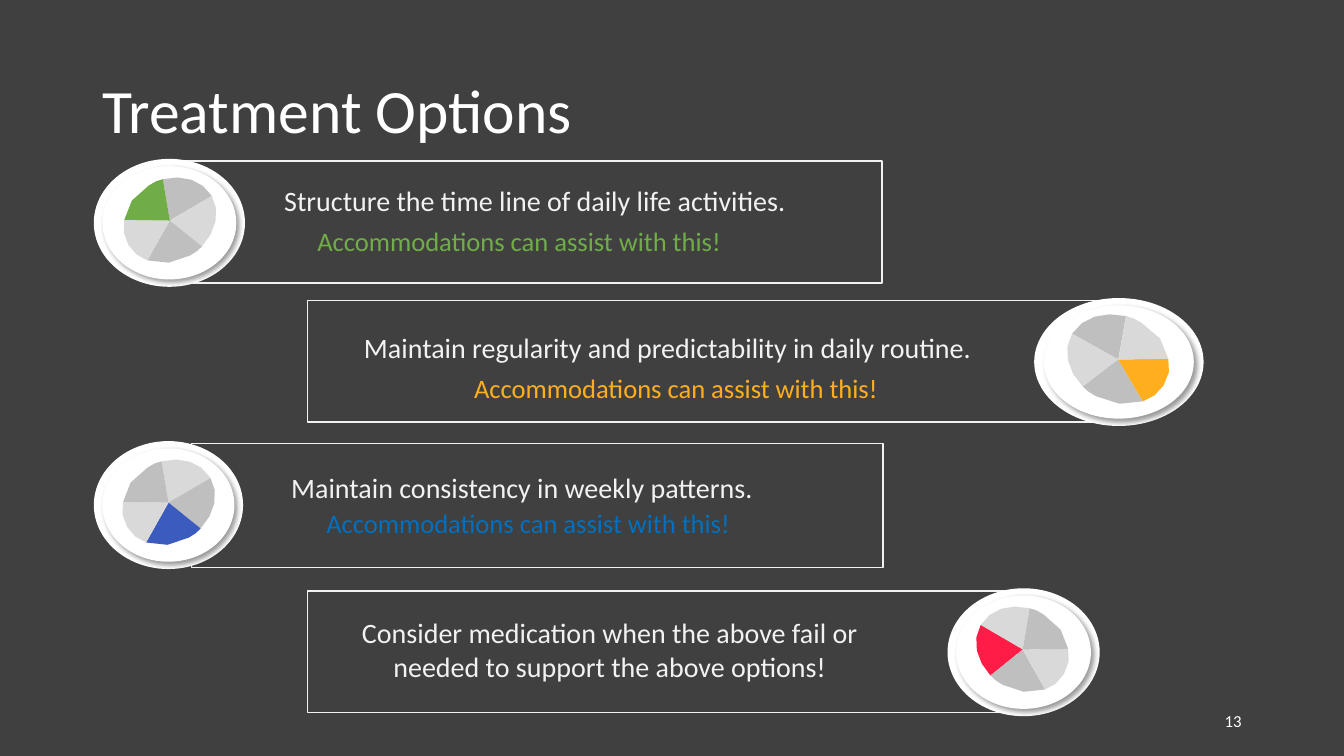
from pptx import Presentation
from pptx.dml.color import RGBColor
from pptx.enum import shapes, text
from pptx.oxml import parse_xml
from pptx.oxml.ns import nsdecls
from pptx.util import Pt

BACK = RGBColor(0x40, 0x40, 0x40)
WHITE = RGBColor(0xFF, 0xFF, 0xFF)
PALE = RGBColor(0xF2, 0xF2, 0xF2)
LIGHT = RGBColor(0xD9, 0xD9, 0xD9)
MID = RGBColor(0xBF, 0xBF, 0xBF)
GREEN = RGBColor(0x70, 0xAD, 0x47)
ORANGE = RGBColor(0xFF, 0xAE, 0x1D)
INDIGO = RGBColor(0x3C, 0x5B, 0xBE)
BLUE = RGBColor(0x00, 0x70, 0xC0)
RED = RGBColor(0xFF, 0x1D, 0x48)

FONT = "Calibri"
LEFT, CENTER, RIGHT = text.PP_ALIGN.LEFT, text.PP_ALIGN.CENTER, text.PP_ALIGN.RIGHT
NOTE = "Accommodations can assist with this!"
DISC_H = 91.4

# Bezier points of the pie rim, clockwise around its hub; each wedge starts where the last ends
RIM = [
    [(9.5, -33), (23, -29), (30, -17.5)],
    [(36.5, -6.5), (33, 8), (23, 18.5)],
    [(21, 21), (18, 23), (14.5, 25), (5, 31), (-6.5, 31.5), (-16, 28.5)],
    [(-21.5, 26.5), (-26.5, 23), (-29.5, 17.5), (-33, 11.5), (-34, 5.5), (-32.5, -0.5)],
    [(-31.5, -10), (-25, -19.5), (-15, -25), (-11.5, -27.5), (-8, -29), (-5, -29.5)],
]

# box, disc (left, width), hub, pie scale (negative x mirrors it), wedge colours,
# texts: (offset and size in the box, alignment, words, size, colour)
PANELS = [
    ((121, 115.2, 509, 87.1), (67, 108), (121.3, 157.5), (1, 1),
     (MID, LIGHT, MID, LIGHT, GREEN),
     [((98.6, 41.8, 343.4, 28.8), LEFT, NOTE, 19, GREEN),
      ((74.9, 12.2, 409, 41), LEFT,
       "Structure the time line of daily life activities.", 20, PALE)]),
    ((219.6, 214.6, 576, 87.1), (738.7, 121), (798.8, 256.8), (-1.1, 1.05),
     (MID, LIGHT, MID, ORANGE, LIGHT),
     [((70.6, 47.5, 385.2, 28.8), CENTER, NOTE, 19, ORANGE),
      ((2.9, 18, 509, 28.8), CENTER,
       "Maintain regularity and predictability in daily routine.", 20, PALE)]),
    ((136.8, 316.8, 493.9, 88.6), (67, 106.6), (120.4, 359), (1, 1),
     (LIGHT, MID, INDIGO, LIGHT, MID),
     [((71.3, 41.8, 338.4, 28.8), CENTER, NOTE, 19, BLUE),
      ((64.1, 15.8, 403.2, 41), LEFT,
       "Maintain consistency in weekly patterns.", 20, PALE)]),
    ((219.6, 421.9, 517, 87.1), (676.8, 108.7), (730.5, 464), (-1, 1),
     (LIGHT, RED, MID, LIGHT, MID),
     [((10.8, 14.4, 410.4, 59.8), CENTER,
       "Consider medication when the above fail or needed to support the above options!",
       20, PALE)]),
]


def add_run(p, words, size, color):
    r = p.add_run()
    r.text = words
    r.font.name, r.font.size, r.font.color.rgb = FONT, Pt(size), color


def add_text(parent, box, align, words, size, color):
    sp = parent.shapes.add_textbox(*map(Pt, box))
    tf = sp.text_frame
    tf.word_wrap = True
    p = tf.paragraphs[0]
    p.alignment = align
    add_run(p, words, size, color)
    return tf


def add_solid(sp, color):
    sp.shadow.inherit = False
    sp.fill.solid()
    sp.fill.fore_color.rgb = color
    sp.line.fill.background()


def add_disc(g, left, top, width):
    """White ring with a smaller, shadowed disc centred in it."""
    for scale in (1, 0.885):
        w, h = width * scale, DISC_H * scale
        sp = g.shapes.add_shape(shapes.MSO_SHAPE.OVAL, Pt(left + (width - w) / 2),
                                Pt(top + (DISC_H - h) / 2), Pt(w), Pt(h))
        add_solid(sp, WHITE)
    sp._element.spPr.find("{*}effectLst").append(parse_xml(
        f'<a:outerShdw {nsdecls("a")} blurRad="{Pt(4)}" dist="{Pt(3)}" dir="2700000"'
        ' algn="tl" rotWithShape="0"><a:srgbClr val="000000">'
        '<a:alpha val="40000"/></a:srgbClr></a:outerShdw>'))


def curve(points):
    """Points along a chain of cubic Bezier curves, four steps for the whole chain."""
    out = [points[0]]
    curves = len(points) // 3
    steps = 4 // curves
    for i in range(0, 3 * curves, 3):
        for n in range(1, steps + 1):
            t = n / steps
            weights = ((1 - t) ** 3, 3 * t * (1 - t) ** 2, 3 * t * t * (1 - t), t ** 3)
            out.append(tuple(sum(k * pt[axis] for k, pt in zip(weights, points[i:i + 4]))
                             for axis in (0, 1)))
    return out


def add_pie(g, hub, scale, colors):
    start = RIM[-1][-1]
    for arc, color in zip(RIM, colors):
        rim = [(Pt(hub[0] + x * scale[0]), Pt(hub[1] + y * scale[1]))
               for x, y in curve([start] + arc)]
        fb = g.shapes.build_freeform(Pt(hub[0]), Pt(hub[1]))
        fb.add_line_segments(rim, close=True)
        add_solid(fb.convert_to_shape(), color)
        start = arc[-1]


def add_panel(s, box, disc, hub, scale, colors, texts):
    g = s.shapes.add_group_shape()
    x, y = box[:2]
    sp = g.shapes.add_shape(shapes.MSO_SHAPE.RECTANGLE, *map(Pt, box))
    sp.shadow.inherit = False
    sp.fill.background()
    sp.line.color.rgb, sp.line.width = PALE, Pt(1.25)
    add_disc(g, disc[0], y - 1.7, disc[1])
    add_pie(g, hub, scale, colors)
    for (dx, dy, w, h), *content in texts:
        add_text(g, (x + dx, y + dy, w, h), *content)


def add_title(s, box, words):
    sp = s.shapes.title
    sp.left, sp.top, sp.width, sp.height = map(Pt, box)
    tf = sp.text_frame
    tf.vertical_anchor = text.MSO_ANCHOR.MIDDLE
    p = tf.paragraphs[0]
    p.alignment, p.line_spacing = LEFT, 0.9
    add_run(p, words, 44, WHITE)


def main():
    prs = Presentation()
    prs.slide_width, prs.slide_height = Pt(960), Pt(540)
    s = prs.slides.add_slide(prs.slide_layouts[5])
    s.background.fill.solid()
    s.background.fill.fore_color.rgb = BACK
    add_title(s, (66, 28.8, 828, 104.4), "Treatment Options")
    for panel in PANELS:
        add_panel(s, *panel)
    tf = add_text(s, (678, 500.4, 216, 28.8), RIGHT, "13", 12, WHITE)
    tf.vertical_anchor = text.MSO_ANCHOR.MIDDLE
    prs.save("out.pptx")


if __name__ == "__main__":
    main()
